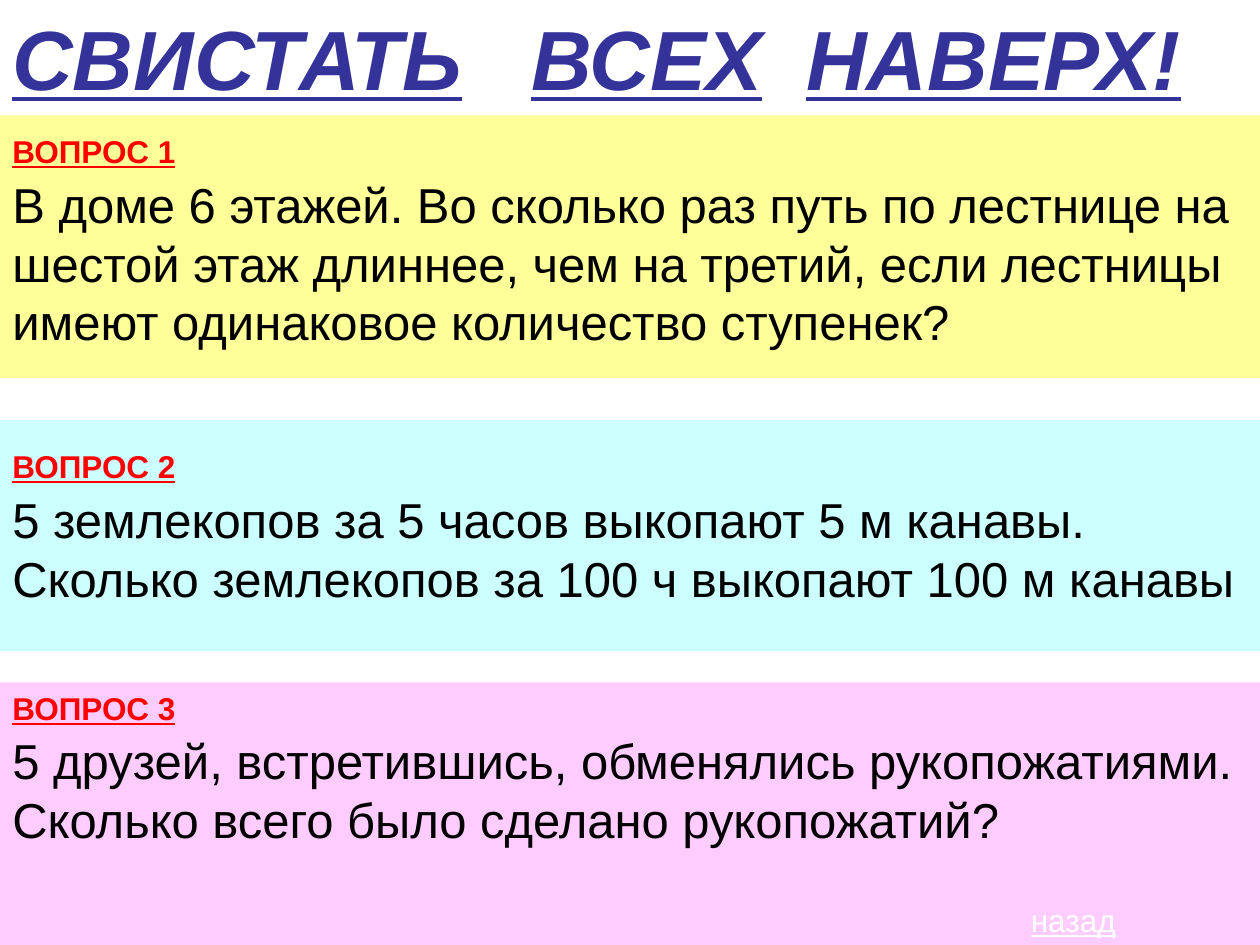
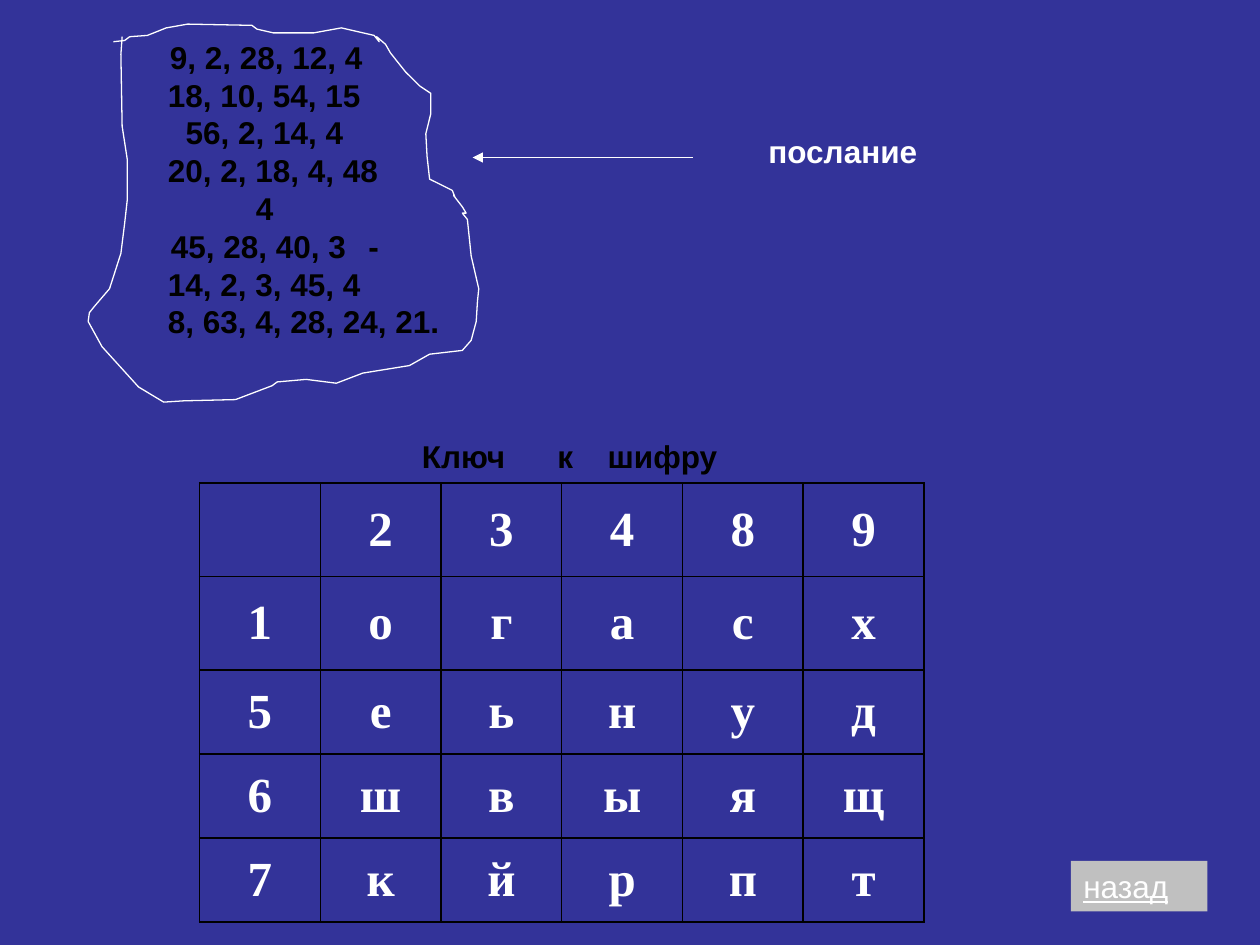
from lxml import etree
from pptx import Presentation
from pptx.dml.color import RGBColor
from pptx.enum.shapes import MSO_CONNECTOR, MSO_SHAPE
from pptx.enum.text import MSO_ANCHOR, PP_ALIGN
from pptx.oxml import parse_xml
from pptx.oxml.ns import nsdecls, qn
from pptx.util import Inches, Pt

# The slide is a grid of 120 columns by 90 rows of square cells.
COLUMNS, ROWS = 120, 90
CELL = Inches(10) // COLUMNS
LABEL_ROWS = 4.8

COLORS = {
    "white": "FFFFFF", "black": "000000", "indigo": "333399", "red": "FF0000",
    "yellow": "FFFF99", "cyan": "CCFFFF", "pink": "FFCCFF", "grey": "C0C0C0",
}

# Band: first row, height in rows, rows above the heading, colour, question
QUESTIONS = [
    (11, 25, 1, "yellow", "В доме 6 этажей. Во сколько раз путь по лестнице на шестой этаж "
     "длиннее, чем на третий, если лестницы имеют одинаковое количество ступенек?"),
    (40, 22, 2, "cyan", "5 землекопов за 5 часов выкопают 5 м канавы. "
     "Сколько землекопов за 100 ч выкопают 100 м канавы"),
    (65, 25, 0, "pink", "5 друзей, встретившись, обменялись рукопожатиями. "
     "Сколько всего было сделано рукопожатий?"),
]

# Line of the message and its indent in columns
MESSAGE = [
    ("9, 2, 28, 12, 4", 0.2), ("18, 10, 54, 15", 0), ("56, 2, 14, 4", 1.7),
    ("20, 2, 18, 4, 48", 0), ("4", 8.4), ("45, 28, 40, 3\t-", 0.3),
    ("14, 2, 3, 45, 4", 0), ("8, 63, 4, 28, 24, 21.", 0),
]

# Torn edge of the message, in hundredths of an inch from its box corner
TORN_EDGE = [
    (20, 14), (29, 13), (33, 10), (47, 9), (62, 3), (79, 0), (130, 1), (134, 4),
    (147, 7), (179, 7), (201, 3), (227, 9), (231, 14), (229, 10), (236, 16),
    (240, 23), (252, 38), (263, 49), (272, 55), (272, 71), (268, 87), (269, 105),
    (271, 123), (289, 132), (291, 137), (290, 136), (297, 145), (300, 150),
    (297, 150), (301, 155), (304, 184), (310, 210), (309, 220), (308, 236),
    (304, 251), (297, 259), (271, 262), (255, 271), (218, 277), (197, 285),
    (173, 282), (150, 284), (146, 287), (117, 298), (76, 299), (60, 300),
    (40, 288), (11, 256), (0, 236), (1, 229), (5, 224), (17, 210), (26, 182),
    (29, 158), (31, 140), (31, 107), (27, 81), (26, 24), (27, 10),
]

CIPHER_KEY = [" 23489", "1огасх", "5еьнуд", "6швыящ", "7кйрпт"]
KEY_ROWS = [8.9, 8.9, 8, 8, 8]


def cells(count):
    return round(count * CELL)


def rgb(color):
    return RGBColor.from_string(COLORS[color])


def format_text(paragraph, size, color, font="Arial", bold=False, italic=False, underline=False):
    for run in paragraph.runs:
        run.font.size = Pt(size)
        run.font.name = font
        run.font.color.rgb = rgb(color)
        run.font.bold, run.font.italic, run.font.underline = bold, italic, underline


def set_tabs(paragraph, stops):
    """Put left tab stops at the given columns of the text area."""
    tabs = etree.SubElement(paragraph._p.get_or_add_pPr(), qn("a:tabLst"))
    for stop in stops:
        etree.SubElement(tabs, qn("a:tab"), pos=str(cells(stop)), algn="l")


def add_label(slide, box, text, size, color, stops=(), wrap=True, **style):
    label = slide.shapes.add_textbox(*map(cells, box))
    label.text_frame.word_wrap = wrap
    paragraph = label.text_frame.paragraphs[0]
    paragraph.text = text
    format_text(paragraph, size, color, **style)
    if stops:
        set_tabs(paragraph, stops)
    return label


def add_back_button(slide, left, top, fill=None):
    button = add_label(slide, (left, top, 13, LABEL_ROWS), "назад", 18, "white", underline=True)
    if fill:
        button.fill.solid()
        button.fill.fore_color.rgb = rgb(fill)


def add_question(slide, number, top, height, padding, color, question):
    band = slide.shapes.add_shape(MSO_SHAPE.RECTANGLE, 0, cells(top), cells(COLUMNS), cells(height))
    band.shadow.inherit = False
    band.fill.solid()
    band.fill.fore_color.rgb = rgb(color)
    band.line.fill.background()
    heading_top = top + padding
    add_label(slide, (0, heading_top, 30, LABEL_ROWS), f"ВОПРОС {number}", 18, "red",
              bold=True, underline=True)
    add_label(slide, (0, heading_top + 4, COLUMNS, 12.4), question, 28, "black")


def add_message(slide, left, top):
    """Place the coded lines inside their torn outline."""
    lines = slide.shapes.add_textbox(*map(cells, (left + 6.4, top + 0.7, 30, 30)))
    frame = lines.text_frame
    frame.word_wrap = False
    frame.vertical_anchor = MSO_ANCHOR.MIDDLE
    frame.text = "\n".join(text for text, _ in MESSAGE)
    for paragraph, (text, indent) in zip(frame.paragraphs, MESSAGE):
        paragraph.alignment = PP_ALIGN.LEFT
        paragraph._p.get_or_add_pPr().set("marL", str(cells(indent)))
        format_text(paragraph, 18, "black", bold=True)
        if "\t" in text:
            set_tabs(paragraph, [18.8])

    builder = slide.shapes.build_freeform(*TORN_EDGE[0], scale=Inches(0.01))
    builder.add_line_segments(TORN_EDGE[1:], close=False)
    edge = builder.convert_to_shape(
        cells(left), cells(top))
    edge.shadow.inherit = False
    edge.fill.background()
    edge.line.color.rgb = rgb("white")
    edge.line.width = Pt(0.75)


def add_pointer(slide, left, top, length):
    pointer = slide.shapes.add_connector(
        MSO_CONNECTOR.STRAIGHT, cells(left), cells(top), cells(left + length), cells(top))
    pointer.line.color.rgb = rgb("white")
    pointer.line.width = Pt(0.75)
    etree.SubElement(pointer.line._get_or_add_ln(), qn("a:headEnd"), type="triangle")
    etree.SubElement(pointer._element.spPr, qn("a:effectLst"))


def add_borders(cell):
    properties = cell._tc.get_or_add_tcPr()
    for side in "LRTB":
        properties.append(parse_xml(
            f'<a:ln{side} w="{Pt(1)}" {nsdecls("a")}><a:solidFill>'
            f'<a:srgbClr val="{COLORS["black"]}"/></a:solidFill></a:ln{side}>'))


def add_cipher_key(slide, left, top, width):
    column_count = len(CIPHER_KEY[0])
    key = slide.shapes.add_table(
        len(CIPHER_KEY), column_count, *map(cells, (left, top, width, sum(KEY_ROWS)))).table
    key.first_row = key.horz_banding = False
    for column in key.columns:
        column.width = cells(width / column_count)
    for row, height, symbols in zip(key.rows, KEY_ROWS, CIPHER_KEY):
        row.height = cells(height)
        for cell, symbol in zip(row.cells, symbols):
            cell.text = symbol.strip()
            cell.vertical_anchor = MSO_ANCHOR.MIDDLE
            paragraph = cell.text_frame.paragraphs[0]
            paragraph.alignment = PP_ALIGN.CENTER
            format_text(paragraph, 28, "white", font="Times New Roman", bold=True)
            add_borders(cell)
            cell.fill.background()


def add_blank_slide(deck, background):
    slide = deck.slides.add_slide(deck.slide_layouts[6])
    slide.background.fill.solid()
    slide.background.fill.fore_color.rgb = rgb(background)
    return slide


def build_questions_slide(deck):
    slide = add_blank_slide(deck, "white")
    add_label(slide, (0, 0, COLUMNS, 10.8), "СВИСТАТЬ\tВСЕХ\tНАВЕРХ!", 48, "indigo",
              stops=(49.4, 75.6), bold=True, italic=True, underline=True)
    for number, question in enumerate(QUESTIONS, 1):
        add_question(slide, number, *question)
    add_back_button(slide, 97, ROWS - LABEL_ROWS)


def build_cipher_slide(deck):
    slide = add_blank_slide(deck, "indigo")
    add_back_button(slide, 102, 82, "grey")
    add_cipher_key(slide, 19, 46, 69)
    add_message(slide, 8.4, 2.3)
    add_pointer(slide, 45, 15, 21)
    add_label(slide, (72, 12, 33, LABEL_ROWS), "послание", 18, "white", bold=True)
    add_label(slide, (39, 41, 31.5, LABEL_ROWS), "Ключ\tк\tшифру", 18, "black",
              stops=(12.9, 17.7), wrap=False, bold=True)


def main():
    deck = Presentation()
    deck.slide_width, deck.slide_height = cells(COLUMNS), cells(ROWS)
    build_questions_slide(deck)
    build_cipher_slide(deck)
    deck.save("out.pptx")


if __name__ == "__main__":
    main()
